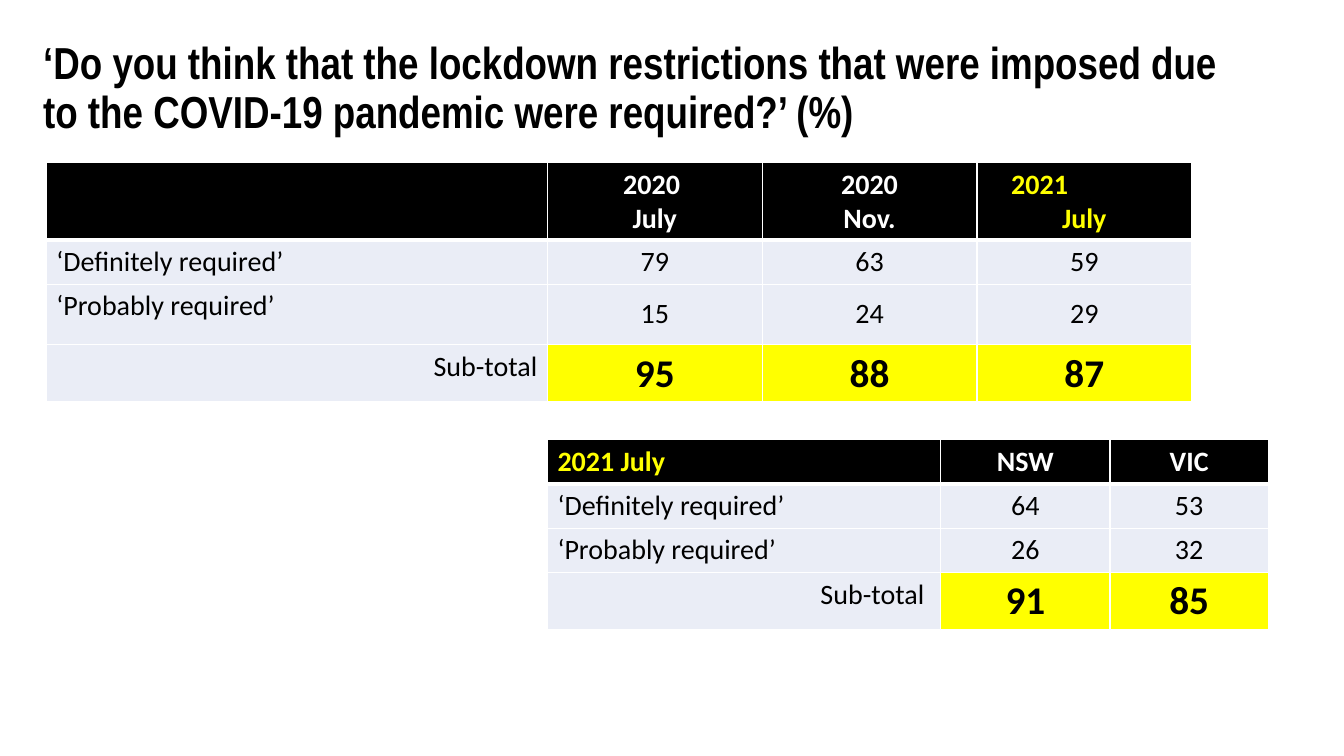
from lxml.etree import SubElement
from pptx import Presentation
from pptx.dml.color import RGBColor
from pptx.enum.text import MSO_ANCHOR as Anchor, PP_ALIGN as Align
from pptx.oxml.ns import qn
from pptx.util import Inches, Pt

BLACK = RGBColor(0, 0, 0)
WHITE = RGBColor(255, 255, 255)
YELLOW = RGBColor(255, 255, 0)
PALE = RGBColor(0xEA, 0xED, 0xF6)

TITLE = ("‘Do you think that the lockdown restrictions that were imposed due "
         "to the COVID-19 pandemic were required?’ (%)")
TABLES = [
    {"at": (0.46, 1.61), "cols": [4.97, 2.13, 2.13, 2.13],
     "rows": [0.77, 0.44, 0.6, 0.57], "anchor": Anchor.MIDDLE, "mark": 3,
     "cells": [["", "2020 \nJuly", "2020\nNov.", "2021\nJuly"],
               ["‘Definitely required’", "79", "63", "59"],
               ["‘Probably required’", "15", "24", "29"],
               ["Sub-total", "95", "88", "87"]]},
    {"at": (5.43, 4.36), "cols": [3.9, 1.68, 1.57],
     "rows": [0.44, 0.44, 0.44, 0.57], "anchor": Anchor.TOP, "mark": 0,
     "cells": [["2021 July", "NSW", "VIC"],
               ["‘Definitely required’", "64", "53"],
               ["‘Probably required’", "26", "32"],
               ["Sub-total ", "91", "85"]]},
]
HEAD = {"size": Pt(20), "bold": True, "name": "Calibri"}
BODY = {"size": Pt(20), "bold": False, "name": "Calibri"}
TOTAL = {"size": Pt(28), "bold": True, "name": "Calibri"}
LABEL = {"size": Pt(32), "bold": True, "name": "Arial Narrow"}


def style(font, form, color):
    for key, value in form.items():
        setattr(font, key, value)
    font.color.rgb = color


def border(cell, row):
    props = cell._tc.get_or_add_tcPr()
    for side in "LRTB":
        thick = (row, side) in ((0, "B"), (1, "T"))
        line = SubElement(props, qn(f"a:ln{side}"), w=str(Pt(3 if thick else 1)))
        fill = SubElement(line, qn("a:solidFill"))
        SubElement(fill, qn("a:srgbClr"), val=str(WHITE))


def look(row, col, last, mark):
    if row == 0:
        return HEAD, YELLOW if col == mark else WHITE, BLACK
    if row == last and col:
        return TOTAL, BLACK, YELLOW
    return BODY, BLACK, PALE


def write(cell, text, row, col, last, data):
    form, color, fill = look(row, col, last, data["mark"])
    border(cell, row)
    cell.fill.solid()
    cell.fill.fore_color.rgb = fill
    cell.vertical_anchor = data["anchor"] if col else Anchor.TOP
    cell.text = text
    for para in cell.text_frame.paragraphs:
        para.alignment = Align.CENTER if col else Align.RIGHT if row == last else Align.LEFT
        style(para.font, form, color)
        for run in para.runs:
            style(run.font, form, color)
    if text == "2021\nJuly":
        year = cell.text_frame.paragraphs[0]
        year.alignment = Align.LEFT
        year._p.get_or_add_pPr().set("marL", str(Inches(0.24)))


def grid(slide, data):
    cols, rows = data["cols"], data["rows"]
    box = [Inches(n) for n in (*data["at"], sum(cols), sum(rows))]
    table = slide.shapes.add_table(len(rows), len(cols), *box).table
    for col, width in zip(table.columns, cols):
        col.width = Inches(width)
    for row, height in zip(table.rows, rows):
        row.height = Inches(height)
    for r, line in enumerate(data["cells"]):
        for c, text in enumerate(line):
            write(table.cell(r, c), text, r, c, len(rows) - 1, data)


def main():
    deck = Presentation()
    deck.slide_width, deck.slide_height = Inches(13.33), Inches(7.5)
    slide = deck.slides.add_slide(deck.slide_layouts[6])
    box = slide.shapes.add_textbox(*[Inches(n) for n in (0.33, 0.36, 12.16, 0.81)])
    box.text_frame.word_wrap = True
    para = box.text_frame.paragraphs[0]
    para.line_spacing = 0.9
    run = para.add_run()
    run.text = TITLE
    style(run.font, LABEL, BLACK)
    for data in TABLES:
        grid(slide, data)
    deck.save("out.pptx")


if __name__ == "__main__":
    main()
